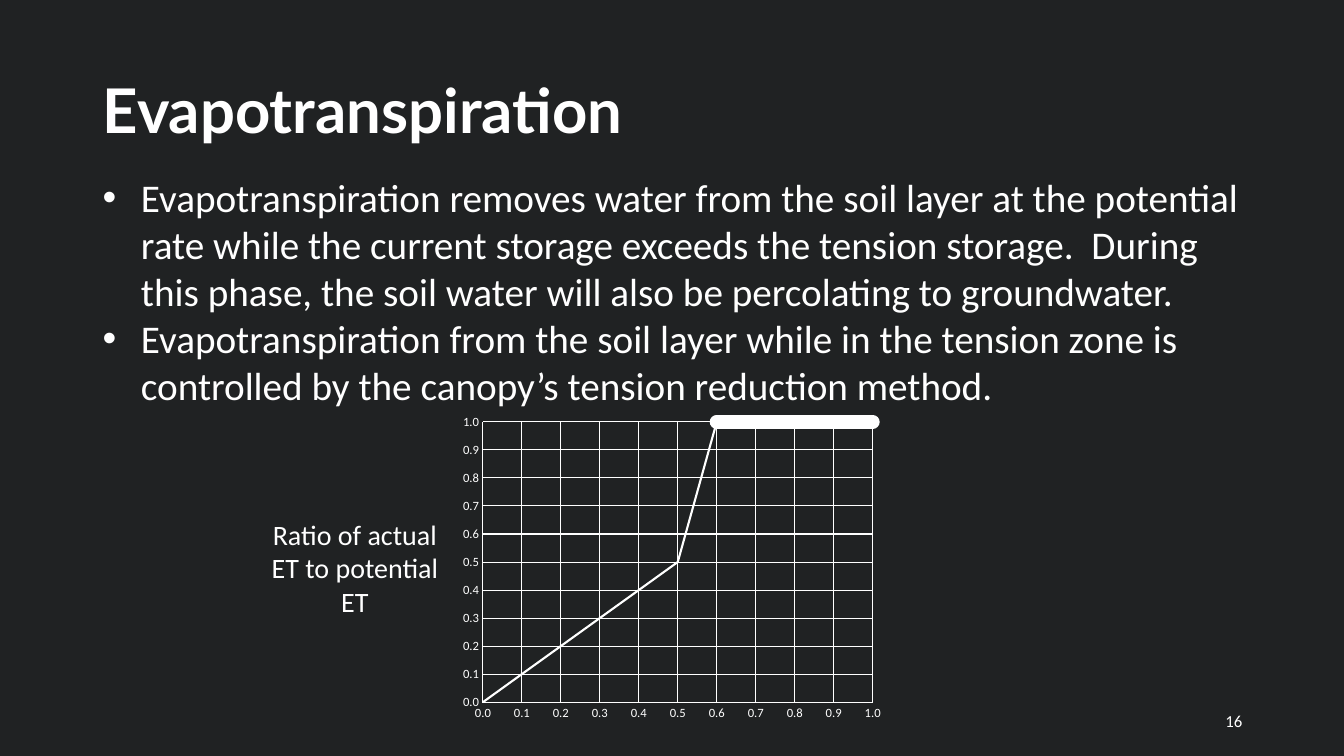
from lxml import etree
from pptx import Presentation
from pptx.chart.data import XyChartData
from pptx.dml.color import RGBColor
from pptx.enum.chart import XL_CHART_TYPE, XL_TICK_MARK
from pptx.enum.text import MSO_ANCHOR, PP_ALIGN
from pptx.oxml import parse_xml
from pptx.oxml.ns import nsdecls, qn
from pptx.util import Inches, Pt

LEFT, CENTER, RIGHT = PP_ALIGN.LEFT, PP_ALIGN.CENTER, PP_ALIGN.RIGHT
TOP, MIDDLE = MSO_ANCHOR.TOP, MSO_ANCHOR.MIDDLE
LINES = XL_CHART_TYPE.XY_SCATTER_LINES_NO_MARKERS
NO_TICK = XL_TICK_MARK.NONE

THEME = {
    "back": RGBColor(0x20, 0x22, 0x23),
    "ink": RGBColor(0xFF, 0xFF, 0xFF),
    "head": "Lato", "body": "Calibri",
    "title": 44, "text": 28, "label": 20, "page": 12, "axis": 9,
    "grid": 0.75, "curve": 1.5, "band": 10,
}
WIDE, HIGH = 13.33, 7.5
EDGE, SPAN = 0.92, 11.5  # content column

deck = Presentation()
deck.slide_width, deck.slide_height = Inches(WIDE), Inches(HIGH)
slide = deck.slides.add_slide(deck.slide_layouts[6])
slide.background.fill.solid()
slide.background.fill.fore_color.rgb = THEME["back"]


def style(font, size, face="body"):
    font.name = THEME[face]
    font.size = Pt(THEME[size])
    font.color.rgb = THEME["ink"]


def add_text(box, lines, size, align=LEFT, anchor=TOP, face="body"):
    frame = slide.shapes.add_textbox(*map(Inches, box)).text_frame
    frame.word_wrap = True
    frame.vertical_anchor = anchor
    frame.text = "\n".join(lines)
    for para in frame.paragraphs:
        para.alignment = align
        style(para.font, size, face)
    return frame.paragraphs


# Title and page number
title = add_text((EDGE, 0.4, SPAN, 1.45), ["Evapotranspiration"],
                 "title", anchor=MIDDLE, face="head")[0]
title.font.bold = True
title.line_spacing = 0.9
add_text((EDGE + SPAN - 3, 6.95, 3, 0.4), ["16"], "page", RIGHT, MIDDLE)

# Bullets
points = [
    "Evapotranspiration removes water from the soil layer at the potential "
    "rate while the current storage exceeds the tension storage.  During "
    "this phase, the soil water will also be percolating to groundwater.",
    "Evapotranspiration from the soil layer while in the tension zone is "
    "controlled by the canopy’s tension reduction method.",
]
for para in add_text((EDGE, 1.67, SPAN, 3.16), points, "text"):
    props = para._p.get_or_add_pPr()
    props.set("marL", str(Inches(0.38)))
    props.set("indent", str(-Inches(0.38)))
    etree.SubElement(props, qn("a:buFont")).set("typeface", "Arial")
    etree.SubElement(props, qn("a:buChar")).set("char", "•")

# Chart of the tension reduction curve
curve = [(n / 10, n / 10) for n in range(6)] + [(0.6, 1)]
band = [(n / 10, 1) for n in range(6, 11)]
data = XyChartData(number_format="0.0")
for name, pairs in (("Series 1", curve), ("Series 2", band)):
    series = data.add_series(name)
    for x, y in pairs:
        series.add_data_point(x, y)
box = map(Inches, (4.51, 4.06, 4.31, 3.16))
chart = slide.shapes.add_chart(LINES, *box, data).chart
chart.has_legend = chart.has_title = False
style(chart.font, "axis")

for axis in (chart.category_axis, chart.value_axis):
    axis.minimum_scale, axis.maximum_scale = 0, 1
    axis.major_unit = 0.1
    axis.major_tick_mark = axis.minor_tick_mark = NO_TICK
    axis.has_major_gridlines = True
    axis.tick_labels.number_format = "0.0"
    axis.tick_labels.number_format_is_linked = False
    style(axis.tick_labels.font, "axis")
    for part in (axis, axis.major_gridlines):
        part.format.line.color.rgb = THEME["ink"]
        part.format.line.width = Pt(THEME["grid"])

for series, weight in zip(chart.plots[0].series, ("curve", "band")):
    series.smooth = False
    series.format.line.color.rgb = THEME["ink"]
    series.format.line.width = Pt(THEME[weight])
    series._element.find(".//" + qn("a:ln")).set("cap", "rnd")

# Fixed plot area, as shares of the chart
area = chart._chartSpace.find(".//" + qn("c:plotArea"))
for old in area.findall(qn("c:layout")):
    area.remove(old)
shares = "".join(f'<c:{key} val="{val}"/>' for key, val in (
    ("layoutTarget", "inner"), ("xMode", "edge"), ("yMode", "edge"),
    ("x", 0.065), ("y", 0.04), ("w", 0.897), ("h", 0.88)))
area.insert(0, parse_xml(
    f'<c:layout {nsdecls("c")}><c:manualLayout>{shares}'
    '</c:manualLayout></c:layout>'))

# Label beside the value axis
add_text((2.56, 5.08, 1.92, 1.11), ["Ratio of actual ET to potential ET"],
         "label", CENTER)

deck.save("out.pptx")
